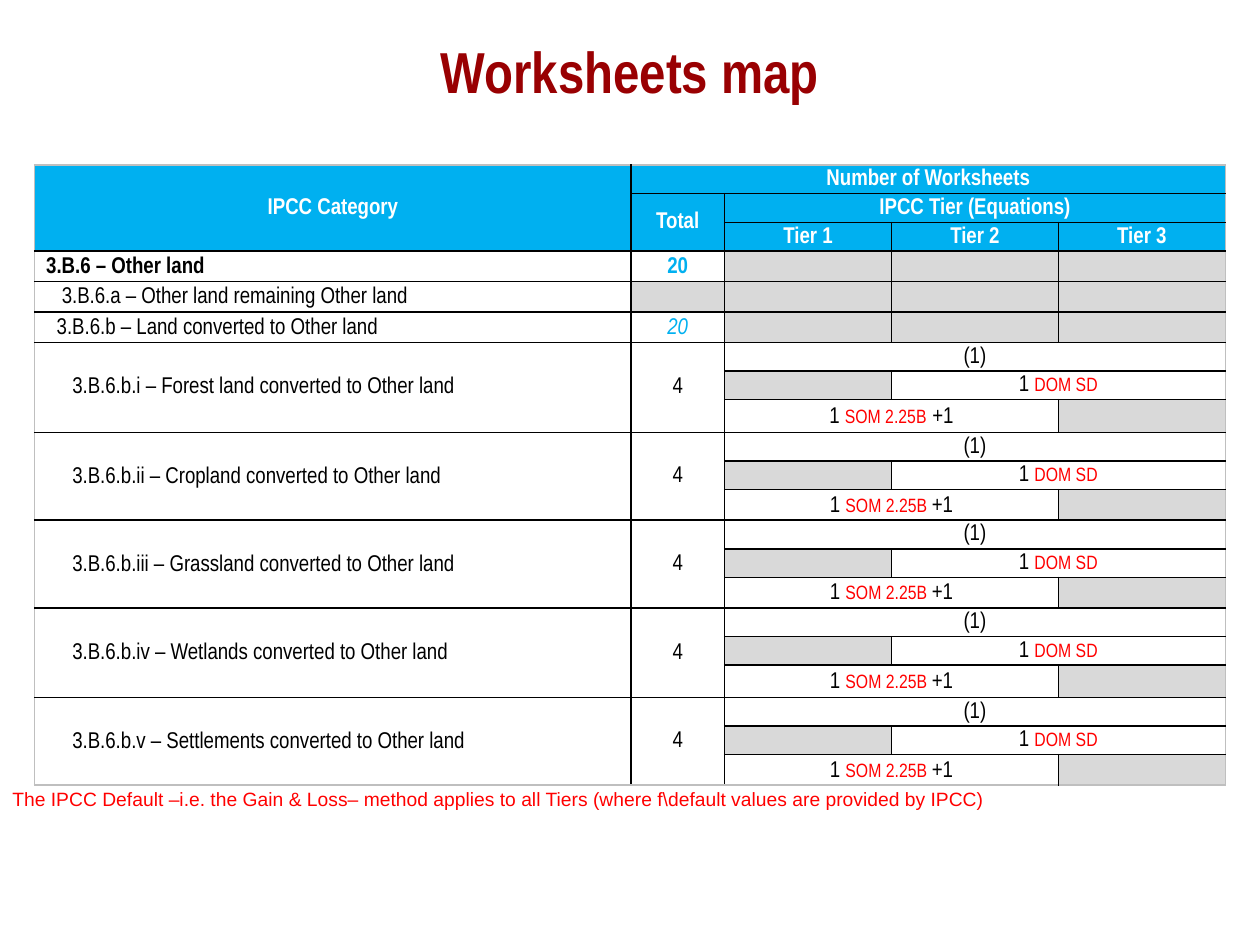
from lxml.etree import SubElement
from pptx import Presentation
from pptx.dml.color import RGBColor
from pptx.enum.text import MSO_ANCHOR, PP_ALIGN
from pptx.oxml.ns import qn
from pptx.util import Pt

BLACK = RGBColor(0x00, 0x00, 0x00)
WHITE = RGBColor(0xFF, 0xFF, 0xFF)
RED = RGBColor(0xFF, 0x00, 0x00)
MAROON = RGBColor(0x99, 0x00, 0x02)
BLUE = RGBColor(0x00, 0xB0, 0xF0)
GREY = RGBColor(0xD9, 0xD9, 0xD9)
EDGE = RGBColor(0xBF, 0xBF, 0xBF)

BODY = {"name": "Arial Narrow", "size": Pt(13), "bold": False, "italic": False}
STRONG = {**BODY, "bold": True}
ITALIC = {**BODY, "italic": True}
SMALL = {**BODY, "size": Pt(11)}
WIDE = {**BODY, "size": Pt(14)}
TITLE = {**STRONG, "size": Pt(33)}
NOTE = {**SMALL, "name": "Arial"}
PLAIN = {"alignment": PP_ALIGN.CENTER}
LOOSE = {"line_spacing": 1.07, "space_after": Pt(8)}
LOOSE_CENTER = {**PLAIN, **LOOSE}


def write(para, layout, spans):
    for name, value in layout.items():
        setattr(para, name, value)
    for text, style, color in spans:
        span = para.add_run()
        span.text = text
        for name, value in style.items():
            setattr(span.font, name, value)
        span.font.color.rgb = color


def draw_border(cell, tag, color):
    line = SubElement(cell._tc.get_or_add_tcPr(), qn(tag), w=str(Pt(1)))
    fill = SubElement(line, qn("a:solidFill"))
    SubElement(fill, qn("a:srgbClr"), val=str(color))


deck = Presentation()
deck.slide_width, deck.slide_height = Pt(720), Pt(540)
page = deck.slides.add_slide(deck.slide_layouts[6])

title = page.shapes.add_textbox(Pt(0), Pt(18), Pt(720), Pt(44)).text_frame
title.word_wrap = True
title.vertical_anchor = MSO_ANCHOR.MIDDLE
write(title.paragraphs[0], PLAIN, [("Worksheets map", TITLE, MAROON)])

widths = [340.7, 53.5] + [95.4] * 3
heights = [16.2] * 3 + [17.3] * 3
for last in (18.4, 17.4, 17.4, 18.4, 17.4):
    heights += [16.2, 16.2, last]

headings = [
    (0, 0, 3, 1, "IPCC Category"),
    (0, 1, 1, 4, "Number of Worksheets"),
    (1, 1, 2, 1, "Total"),
    (1, 2, 1, 3, "IPCC Tier (Equations)"),
    (2, 2, 1, 1, "Tier 1"),
    (2, 3, 1, 1, "Tier 2"),
    (2, 4, 1, 1, "Tier 3"),
]
entries = [
    (row, col, down, across, BLUE, 0.72, PLAIN, [(text, STRONG, WHITE)])
    for row, col, down, across, text in headings
]

summaries = [
    ("3.B.6 – Other land", STRONG, 6.6, [("20", STRONG, BLUE)]),
    ("3.B.6.a – Other land remaining Other land", BODY, 15.5, []),
    ("3.B.6.b – Land converted to Other land", BODY, 12.6, [("20", ITALIC, BLUE)]),
]
for row, (text, style, indent, total) in enumerate(summaries, 3):
    entries.append((row, 0, 1, 1, None, indent, LOOSE, [(text, style, BLACK)]))
    entries.append((row, 1, 1, 1, None if total else GREY, 0.72, LOOSE_CENTER, total))
    entries += [(row, col, 1, 1, GREY, 0.72, {}, []) for col in (2, 3, 4)]

conversions = [
    ("i", "Forest land"),
    ("ii", "Cropland"),
    ("iii", "Grassland"),
    ("iv", "Wetlands"),
    ("v", "Settlements"),
]
for index, (numeral, land) in enumerate(conversions):
    top = 6 + 3 * index
    label = f"3.B.6.b.{numeral} – {land} converted to Other land"
    if index == 0:
        soil = [("SOM 2.25B", SMALL, RED), (" ", WIDE, BLACK)]
    else:
        soil = [("SOM 2.25B ", SMALL, RED)]
    soil = [("1 ", BODY, BLACK), *soil, ("+1", BODY, BLACK)]
    litter = [("1 ", BODY, BLACK), ("DOM SD", SMALL, RED)]
    entries += [
        (top, 0, 3, 1, None, 21.5, LOOSE if index else {}, [(label, BODY, BLACK)]),
        (top, 1, 3, 1, None, 0.72, PLAIN, [("4", BODY, BLACK)]),
        (top, 2, 1, 3, None, 0.72, PLAIN, [("(1)", BODY, BLACK)]),
        (top + 1, 2, 1, 1, GREY, 0.72, {}, []),
        (top + 1, 3, 1, 2, None, 0.72, PLAIN, litter),
        (top + 2, 2, 1, 2, None, 0.72, LOOSE_CENTER, soil),
        (top + 2, 4, 1, 1, GREY, 0.72, {}, []),
    ]

table = page.shapes.add_table(
    len(heights), len(widths), Pt(19.8), Pt(94.3), Pt(sum(widths)), Pt(sum(heights))
).table
table.first_row = table.horz_banding = False
for column, width in zip(table.columns, widths):
    column.width = Pt(width)
for line, height in zip(table.rows, heights):
    line.height = Pt(height)

cell_format = {
    "margin_left": Pt(0.72),
    "margin_right": Pt(0.72),
    "margin_top": Pt(0.72),
    "margin_bottom": Pt(0),
    "vertical_anchor": MSO_ANCHOR.MIDDLE,
}
for cell in table.iter_cells():
    for name, value in cell_format.items():
        setattr(cell, name, value)
    SubElement(cell.text_frame.paragraphs[0]._p, qn("a:endParaRPr"), sz="1100")

for row, col, down, across, color, indent, layout, spans in entries:
    cell = table.cell(row, col)
    if down * across > 1:
        cell.merge(table.cell(row + down - 1, col + across - 1))
    cell.margin_left = Pt(indent)
    write(cell.text_frame.paragraphs[0], layout, spans)
    borders = {
        "a:lnL": col == 0,
        "a:lnR": col + across == len(widths),
        "a:lnT": row == 0,
        "a:lnB": row + down == len(heights),
    }
    for tag, outer in borders.items():
        draw_border(cell, tag, EDGE if outer else BLACK)
    if color is None:
        cell.fill.background()
    else:
        cell.fill.solid()
        cell.fill.fore_color.rgb = color

note = page.shapes.add_textbox(Pt(0), Pt(446.4), Pt(720), Pt(20.9)).text_frame
note.word_wrap = True
message = (
    "The IPCC Default –i.e. the Gain & Loss– method applies to all Tiers "
    "(where f\\default values are provided by IPCC)"
)
write(note.paragraphs[0], {}, [(message, NOTE, RED)])

deck.save("out.pptx")
